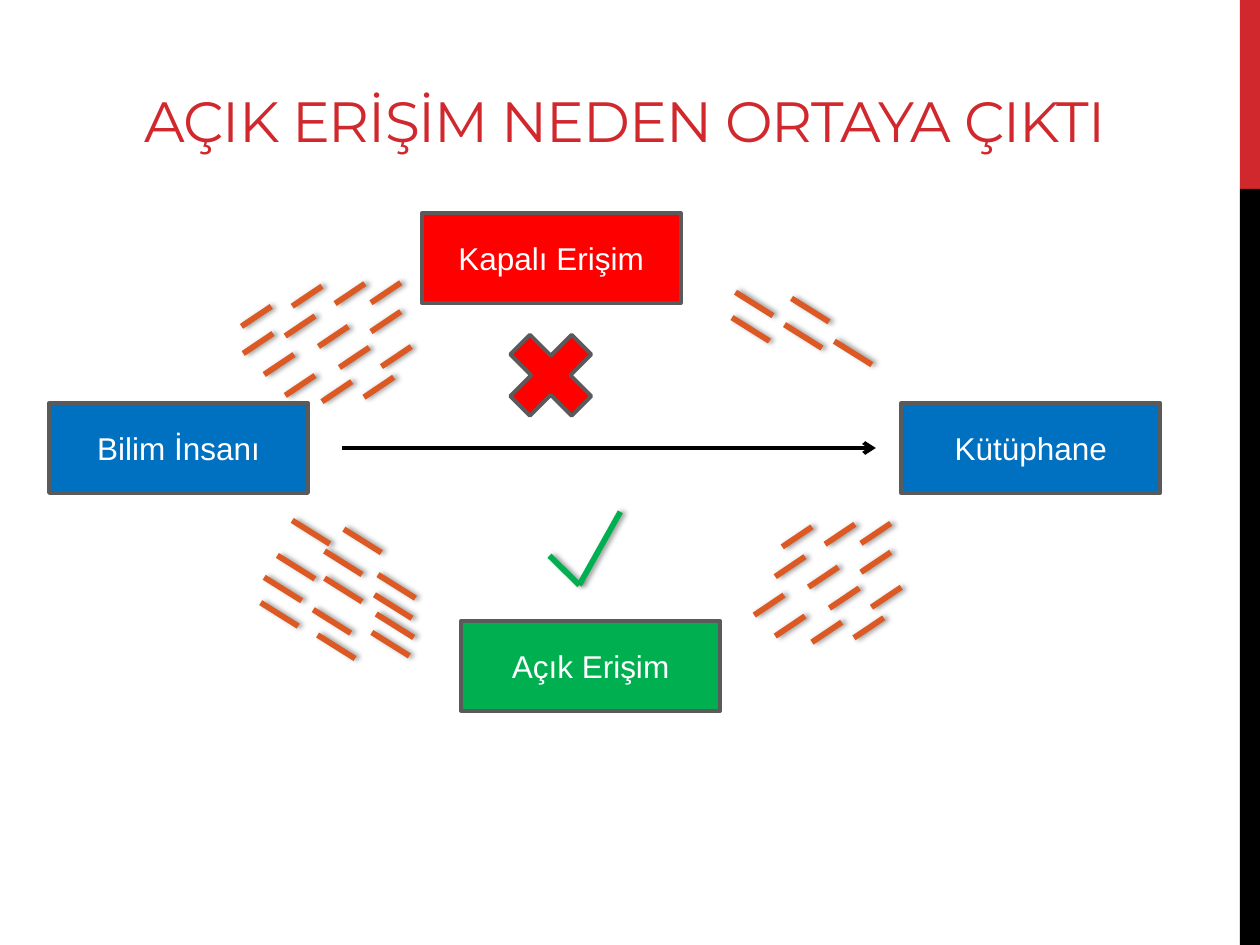
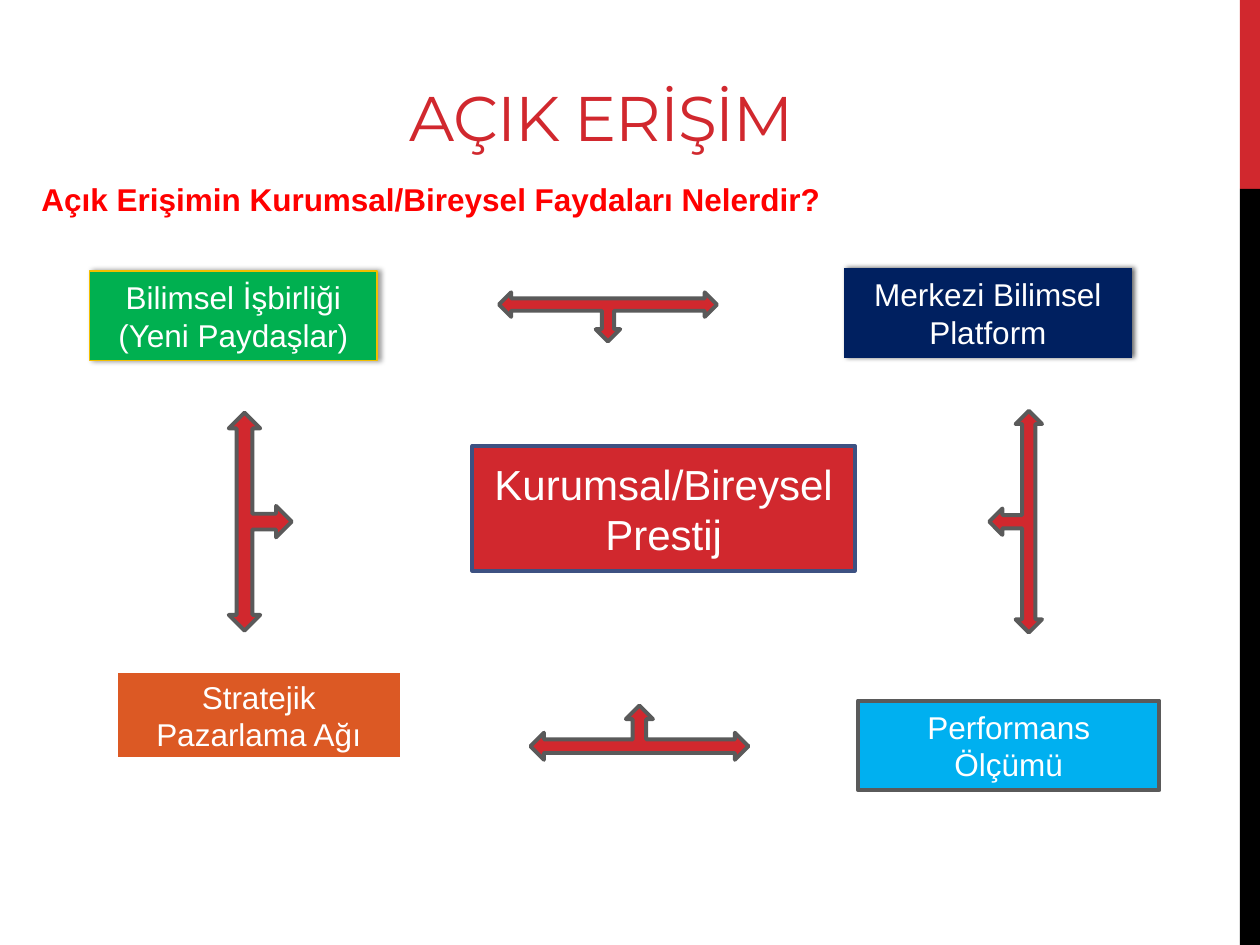
from lxml import etree
from pptx import Presentation
from pptx.dml.color import RGBColor
from pptx.enum import shapes, text
from pptx.oxml import ns
from pptx.util import Pt

RED = RGBColor(0xD1, 0x28, 0x2E)
BRIGHT_RED = RGBColor(0xFF, 0x00, 0x00)
BLACK = RGBColor(0x00, 0x00, 0x00)
WHITE = RGBColor(0xFF, 0xFF, 0xFF)
GREY = RGBColor(0x5A, 0x5A, 0x5A)
BLUE = RGBColor(0x00, 0x70, 0xC0)
GREEN = RGBColor(0x00, 0xB0, 0x50)
ORANGE = RGBColor(0xDC, 0x59, 0x24)
NAVY = RGBColor(0x00, 0x20, 0x60)
SKY = RGBColor(0x00, 0xB0, 0xF0)
GOLD = RGBColor(0xF1, 0xBE, 0x00)
SLATE = RGBColor(0x3D, 0x51, 0x82)

BODY_FONT = "Arial"
TITLE_FONT = "Montserrat"
SHAPE = shapes.MSO_SHAPE
ALIGN = text.PP_ALIGN
ANCHOR = text.MSO_ANCHOR

RISING = (17, -11.4)
FALLING = (21.4, 13.4)
RISING_STARTS = [
    (1, 40), (13, 52), (25, 64), (25, 30), (44, 36), (56, 48), (53.5, 11.5),
    (74, 27.5), (80, 47.5), (46, 67.5), (70, 65), (29, 13), (74, 11),
    (0, 24.5),
]
RISING_STARTS_RIGHT = RISING_STARTS[1:-1]
FALLING_STARTS = [
    (18, 0), (9.5, 20), (36.5, 17.5), (36.5, 33), (67, 31), (47.5, 5),
    (65, 42.5), (63.5, 64), (66, 53.5), (32.5, 65.5), (30, 51), (0, 47),
    (2, 32.5),
]
FALLING_STARTS_RIGHT = [(34, 3.5), (58.5, 28), (30, 18.5), (0, 14.5), (2, 0)]


def add_effects(item, shadow):
    properties = item._element.spPr
    effects = properties.find(ns.qn("a:effectLst"))
    if effects is None:
        effects = etree.SubElement(properties, ns.qn("a:effectLst"))
    if shadow:
        blur, distance, opacity = shadow
        outer = etree.SubElement(
            effects, ns.qn("a:outerShdw"), blurRad=str(Pt(blur)),
            dist=str(Pt(distance)), dir="0", algn="ctr", rotWithShape="0")
        color = etree.SubElement(outer, ns.qn("a:srgbClr"), val=str(BLACK))
        etree.SubElement(color, ns.qn("a:alpha"), val=str(opacity * 1000))


SOFT_SHADOW = (3.1, 1.8, 40)
DEEP_SHADOW = (3, 1.5, 60)


def add_block(page, box, fill, kind=SHAPE.RECTANGLE, line=GREY, width=2.25,
              shadow=None, rotation=0):
    shape = page.shapes.add_shape(kind, *map(Pt, box))
    shape.shadow.inherit = False
    shape.rotation = rotation
    shape.fill.solid()
    shape.fill.fore_color.rgb = fill
    if line is None:
        shape.line.fill.background()
    else:
        shape.line.color.rgb = line
        shape.line.width = Pt(width)
    add_effects(shape, shadow)
    return shape


def write(frame, lines, size, color, font=BODY_FONT, align=ALIGN.CENTER,
          anchor=ANCHOR.MIDDLE, bold=False):
    frame.word_wrap = True
    frame.vertical_anchor = anchor
    frame.text = lines
    for para in frame.paragraphs:
        para.alignment = align
        para.font.name = font
        para.font.size = Pt(size)
        para.font.bold = bold
        para.font.color.rgb = color


def add_label(page, box, lines, fill, size=18, **style):
    shape = add_block(page, box, fill, **style)
    write(shape.text_frame, lines, size, WHITE)


def add_line(page, start, end, color, width, shadow=None):
    line = page.shapes.add_connector(
        shapes.MSO_CONNECTOR.STRAIGHT, *map(Pt, (*start, *end)))
    line.line.color.rgb = color
    line.line.width = Pt(width)
    add_effects(line, shadow)
    return line


def add_strokes(page, corner, starts, stroke):
    left, top = corner
    for x, y in starts:
        start = (left + x, top + y)
        end = (start[0] + stroke[0], start[1] + stroke[1])
        add_line(page, start, end, ORANGE, 3.25, SOFT_SHADOW)


def add_check(page, box):
    left, top, width, height = box
    elbow = (left + 0.42 * width, top + height)
    for tip in ((left, top + 0.6 * height), (left + width, top)):
        add_line(page, tip, elbow, GREEN, 3.25, SOFT_SHADOW)


def add_page(deck, title, box, size):
    page = deck.slides.add_slide(deck.slide_layouts[6])
    for top, height, color in ((0, 108, RED), (108, 432, BLACK)):
        add_block(page, (708.5, top, 11.5, height), color, line=None)
    heading = page.shapes.add_textbox(*map(Pt, box))
    write(heading.text_frame, title, size, RED, TITLE_FONT,
          anchor=ANCHOR.BOTTOM)
    for span in heading.text_frame.paragraphs[0].runs:
        span._r.get_or_add_rPr().set("spc", "-60")
    return page


def build_origin_page(deck):
    page = add_page(deck, "AÇIK ERİŞİM NEDEN ORTAYA ÇIKTI",
                    (36.7, 20.9, 640.8, 70.6), 32.4)
    for left, top, label, fill in (
            (28, 230.5, "Bilim İnsanı", BLUE),
            (241, 122, "Kapalı Erişim", BRIGHT_RED),
            (515, 230.5, "Kütüphane", BLUE),
            (263.5, 355, "Açık Erişim", GREEN)):
        add_label(page, (left, top, 148, 51.2), label, fill)

    arrow = add_line(page, (195.5, 256), (500.5, 256), BLACK, 2.25)
    etree.SubElement(arrow.line._get_or_add_ln(), ns.qn("a:tailEnd"),
                     type="arrow")
    add_block(page, (281, 180.7, 67.5, 67.5), BRIGHT_RED, SHAPE.MATH_MULTIPLY)
    add_check(page, (314, 292.5, 40.5, 41.8))

    add_strokes(page, (138, 162), RISING_STARTS, RISING)
    add_strokes(page, (149, 297.4), FALLING_STARTS, FALLING)
    add_strokes(page, (418, 299.5), RISING_STARTS_RIGHT, RISING)
    add_strokes(page, (418.3, 167), FALLING_STARTS_RIGHT, FALLING)


def build_benefits_page(deck):
    page = add_page(deck, "AÇIK ERİŞİM", (116, 20.9, 455.8, 70.6), 36)
    process = SHAPE.FLOWCHART_PROCESS
    add_label(page, (270, 254.9, 218.5, 71.3), "Kurumsal/Bireysel Prestij",
              RED, 24, kind=process, line=SLATE)
    add_label(page, (51.2, 154.8, 164.2, 51.2),
              "Bilimsel İşbirliği\n(Yeni Paydaşlar)", GREEN,
              kind=process, line=GOLD, width=1, shadow=SOFT_SHADOW)
    add_label(page, (482.4, 153.2, 164.2, 51.2), "Merkezi Bilimsel Platform",
              NAVY, kind=process, line=None, shadow=DEEP_SHADOW)
    add_label(page, (490.3, 400.4, 172.2, 51.2), "Performans Ölçümü", SKY,
              kind=process)
    add_label(page, (65.7, 383.2, 164.2, 51.2), "Stratejik Pazarlama Ağı",
              ORANGE, kind=process, line=WHITE, width=3.25)

    question = page.shapes.add_textbox(Pt(16.6), Pt(99.4), Pt(463.7), Pt(28.8))
    write(question.text_frame,
          "Açık Erişimin Kurumsal/Bireysel Faydaları Nelerdir?", 18,
          BRIGHT_RED, align=ALIGN.LEFT, anchor=ANCHOR.TOP, bold=True)
    question.text_frame.word_wrap = False

    for box, rotation in (
            ((303.1, 403.2, 124.6, 31), 0),
            ((86.4, 280.1, 124.6, 36), 90),
            ((285.1, 167, 124.6, 28.1), 180),
            ((517, 283, 126.7, 30.2), 270)):
        add_block(page, box, RED, SHAPE.LEFT_RIGHT_UP_ARROW, rotation=rotation)


def main():
    deck = Presentation()
    deck.slide_width, deck.slide_height = Pt(720), Pt(540)
    build_origin_page(deck)
    build_benefits_page(deck)
    deck.save("out.pptx")


if __name__ == "__main__":
    main()
